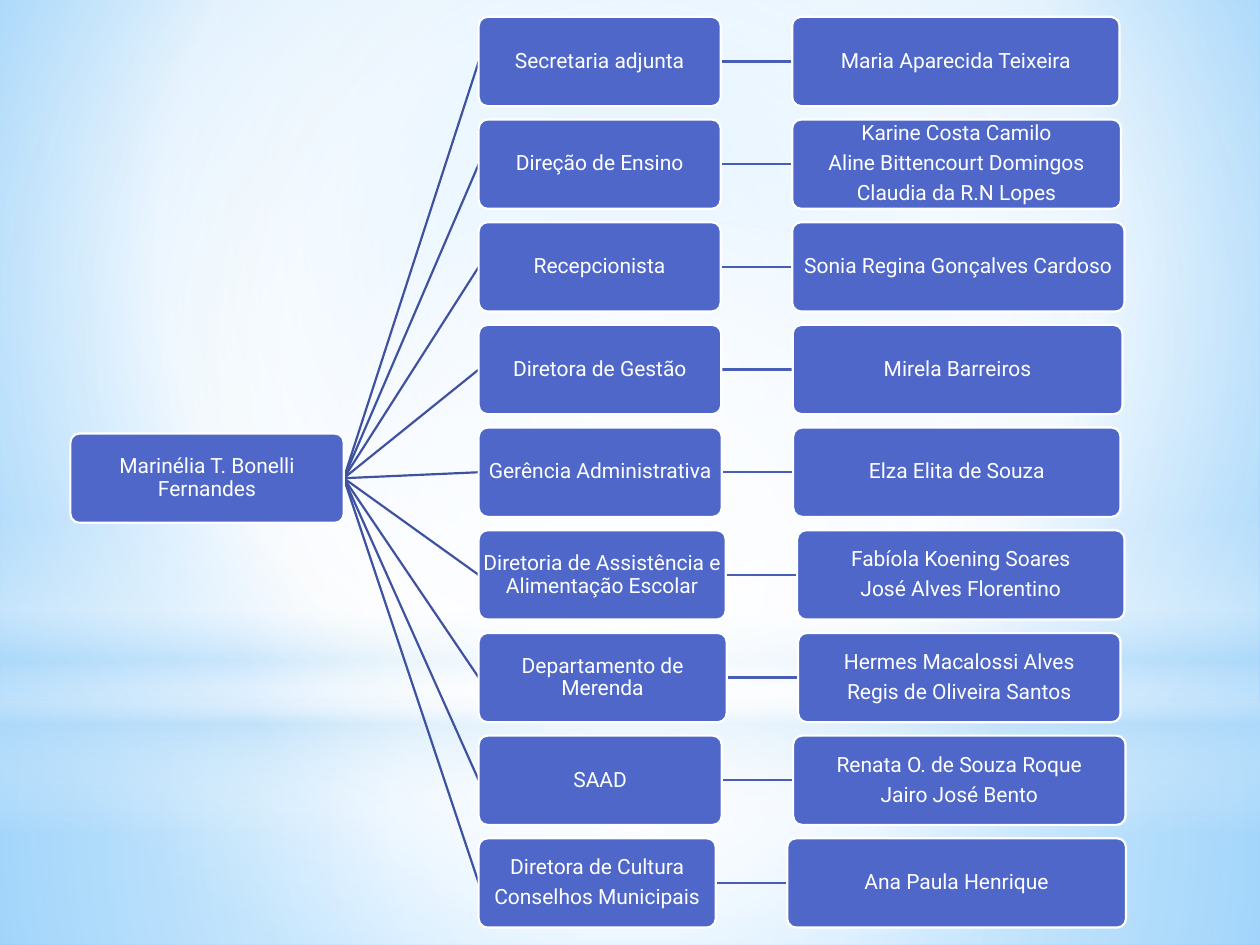
from lxml import etree
from pptx import Presentation
from pptx import util as u
from pptx.dml.color import RGBColor
from pptx.enum import shapes, text
from pptx.oxml.ns import nsdecls, qn

Cm = u.Cm
hue = RGBColor.from_string
BLUE, EDGE, FAN, LINK = "4E67C8", "FFFFFF", "3E52A0", "475DB6"


def blend(node, stops, focus=None):
    marks = "".join(
        f'<a:gs pos="{pos * 1000}"><a:srgbClr val="{tint}">'
        f'<a:alpha val="{alpha * 1000}"/></a:srgbClr></a:gs>'
        for pos, tint, alpha in stops)
    if focus:
        sides = " ".join(f'{side}="{part * 1000}"' for side, part in zip("ltrb", focus))
        way = f'<a:path path="circle"><a:fillToRect {sides}/></a:path>'
    else:
        way = '<a:lin ang="5400000" scaled="0"/>'
    fill = etree.fromstring(
        f'<a:gradFill {nsdecls("a")} rotWithShape="1"><a:gsLst>{marks}</a:gsLst>{way}</a:gradFill>')
    node.replace(node.find(qn("a:solidFill")), fill)


def write(frame, words, size=12, font="Roboto", color="FFFFFF", inset=0.02):
    frame.word_wrap = True
    frame.vertical_anchor = text.MSO_ANCHOR.MIDDLE
    frame.margin_left = frame.margin_right = Cm(inset)
    frame.margin_top = frame.margin_bottom = Cm(inset)
    frame.text = words
    for para in frame.paragraphs:
        para.alignment = text.PP_ALIGN.CENTER
        para.line_spacing = 0.9
        para.space_after = u.Pt(size * 0.35)
        para.font.size = u.Pt(size)
        para.font.name = font
        para.font.color.rgb = hue(color)


deck = Presentation()
deck.slide_width, deck.slide_height = Cm(25.4), Cm(19.05)
slide = deck.slides.add_slide(deck.slide_layouts[6])
draw = slide.shapes

slide.background.fill.solid()
blend(slide.element.find(".//" + qn("p:bgPr")),
      [(0, "9ED5FF", 100), (60, "FFFFFF", 100), (100, "5BB9FF", 100)], (20, 10, 20, 60))

kind = shapes.MSO_SHAPE
mid = (50, 50, 50, 50)
veils = [
    (kind.RECTANGLE, 14.17, 4.88, mid,
     [(0, "FFFFFF", 91), (37, "FFFFFF", 76), (100, "B4DCFA", 79)]),
    (kind.RECTANGLE, 0, 14.17, mid,
     [(0, "FFFFFF", 89), (48, "FFFFFF", 62), (100, "B4DCFA", 79)]),
    (kind.RECTANGLE, 10.46, 6.35, None,
     [(0, "FFFFFF", 0), (29, "FFFFFF", 30), (45, "B4DCFA", 40),
      (55, "FFFFFF", 26), (65, "B4DCFA", 60), (100, "FFFFFF", 0)]),
    (kind.OVAL, 4.44, 14.17, mid, [(0, "FFFFFF", 100), (56, "FFFFFF", 0)]),
]
for form, top, high, focus, stops in veils:
    veil = draw.add_shape(form, 0, Cm(top), deck.slide_width, Cm(high))
    veil.shadow.inherit = False
    veil.line.fill.background()
    veil.fill.solid()
    blend(veil.element.spPr, stops, focus)

staff = [
    ("Secretaria adjunta", 4.88, "Maria Aparecida Teixeira", 6.6),
    ("Direção de Ensino", 4.88,
     "Karine Costa Camilo\nAline Bittencourt Domingos\nClaudia da R.N Lopes", 6.63),
    ("Recepcionista", 4.88, "Sonia Regina Gonçalves Cardoso", 6.7),
    ("Diretora de Gestão", 4.89, "Mirela Barreiros", 6.65),
    ("Gerência Administrativa", 4.9, "Elza Elita de Souza", 6.6),
    ("Diretoria de Assistência e Alimentação Escolar", 4.98,
     "Fabíola Koening Soares\nJosé Alves Florentino", 6.6),
    ("Departamento de Merenda", 5, "Hermes Macalossi Alves\nRegis de Oliveira Santos", 6.5),
    ("SAAD", 4.9, "Renata O. de Souza Roque\nJairo José Bento", 6.7),
    ("Diretora de Cultura\nConselhos Municipais", 4.78, "Ana Paula Henrique", 6.83),
]
first, step, high, left, gap = 0.34, 2.07, 1.8, 9.65, 1.44
hub, root, wide = 1.42, 8.74, 5.51
start, heart = hub + wide, root + high / 2

boxes = [(hub, root, wide, "Marinélia T. Bonelli Fernandes")]
lines = []
for row, (role, span, names, room) in enumerate(staff):
    top = first + row * step
    axis = top + high / 2
    end = left + span
    boxes += [(left, top, span, role), (end + gap, top, room, names)]
    lines += [(start, heart, left, axis, FAN), (end, axis, end + gap, axis, LINK)]

for x1, y1, x2, y2, tint in lines:
    line = draw.add_connector(shapes.MSO_CONNECTOR.STRAIGHT, Cm(x1), Cm(y1), Cm(x2), Cm(y2))
    line.line.color.rgb = hue(tint)
    line.line.width = u.Pt(1.25)
    etree.SubElement(line.element.spPr, qn("a:effectLst"))

for x, y, span, words in boxes:
    box = draw.add_shape(kind.ROUNDED_RECTANGLE, Cm(x), Cm(y), Cm(span), Cm(high))
    box.adjustments[0] = 0.1
    box.shadow.inherit = False
    box.fill.solid()
    box.fill.fore_color.rgb = hue(BLUE)
    box.line.color.rgb = hue(EDGE)
    box.line.width = u.Pt(1.25)
    write(box.text_frame, words)

deck.save("out.pptx")
